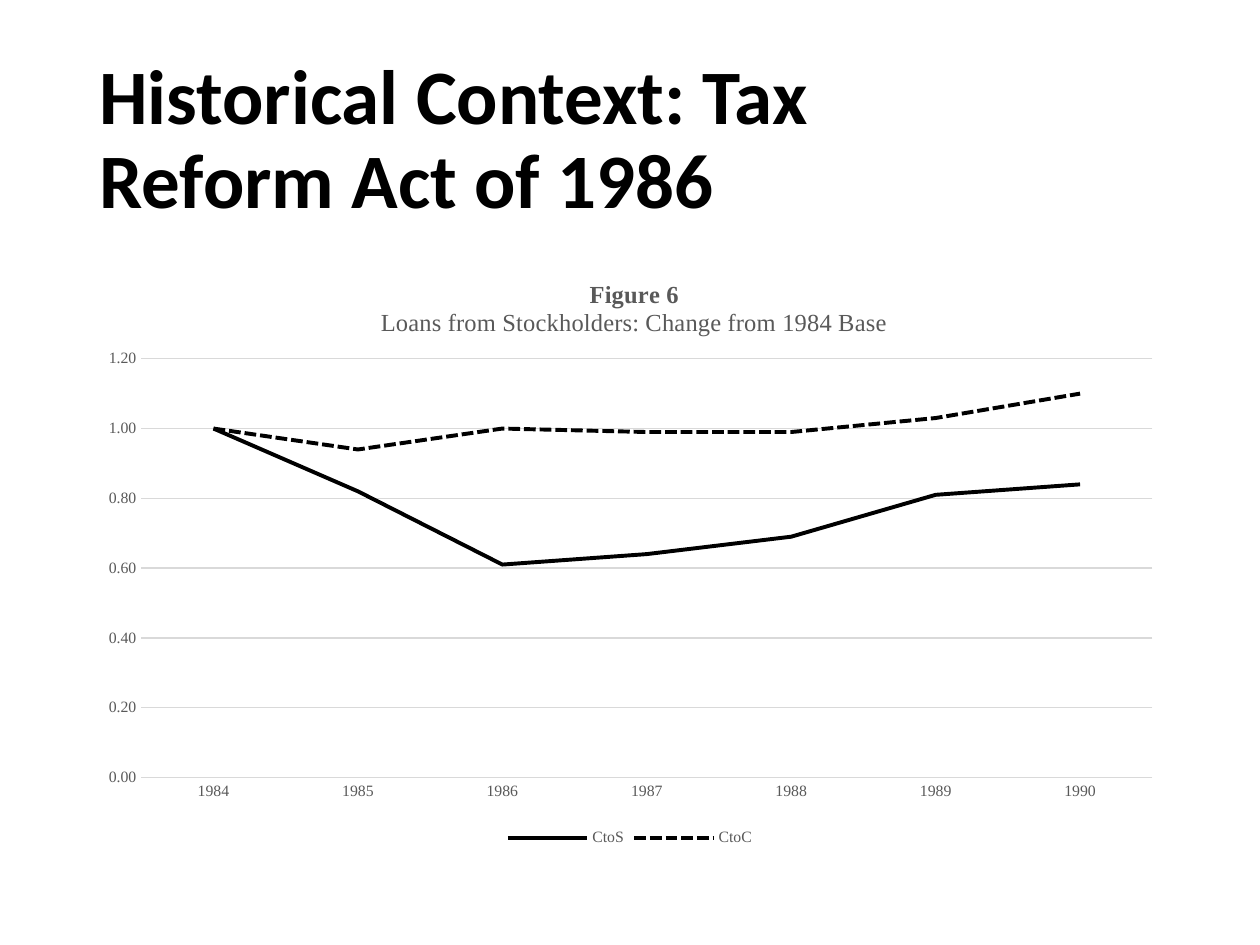
from pptx import Presentation
from pptx.chart.data import CategoryChartData
from pptx.dml.color import RGBColor
from pptx.enum.chart import XL_CHART_TYPE, XL_LEGEND_POSITION, XL_TICK_MARK
from pptx.enum.dml import MSO_LINE
from pptx.enum.text import MSO_ANCHOR
from pptx.oxml import parse_xml
from pptx.oxml.ns import nsdecls, qn
from pptx.util import Pt

PX = 914400 // 126
HUES = {"ink": "000000", "gray": "595959", "grid": "D9D9D9"}
SERIF = "Times New Roman"

HEAD = "Historical Context: Tax Reform Act of 1986"
TITLE = [("Figure 6", True), ("Loans from Stockholders: Change from 1984 Base", False)]
YEARS = ["1984", "1985", "1986", "1987", "1988", "1989", "1990"]
LOANS = [
    ("CtoS", [1, 0.82, 0.61, 0.64, 0.69, 0.81, 0.84], MSO_LINE.SOLID),
    ("CtoC", [1, 0.94, 1, 0.99, 0.99, 1.03, 1.1], MSO_LINE.SQUARE_DOT),
]
HEAD_BOX = (87, 50, 934, 183)
CHART_BOX = (87, 252, 1086, 600)
TITLE_AT = (377, 275)
PLOT_BOX = (141, 359, 1011, 419)


def color(name):
    return RGBColor.from_string(HUES[name])


def emu(box):
    return [n * PX for n in box]


def style(font, face=SERIF, size=9, hue="gray", bold=False):
    font.name, font.size, font.bold = face, Pt(size), bold
    font.color.rgb = color(hue)


def write(para, text, **form):
    run = para.add_run()
    run.text = text
    style(run.font, **form)


def stroke(line, hue, width):
    line.color.rgb = color(hue)
    line.width = Pt(width)


def place(node, index, box, inner=False):
    for old in node.findall(qn("c:layout")):
        node.remove(old)
    left, top, wide, high = CHART_BOX
    parts = [(box[0] - left) / wide, (box[1] - top) / high]
    parts += [n / full for n, full in zip(box[2:], (wide, high))]
    tags = '<c:layoutTarget val="inner"/>' if inner else ""
    tags += '<c:xMode val="edge"/><c:yMode val="edge"/>'
    tags += "".join(f'<c:{key} val="{n:.3f}"/>' for key, n in zip("xywh", parts))
    node.insert(index, parse_xml(
        f'<c:layout {nsdecls("c")}><c:manualLayout>{tags}</c:manualLayout></c:layout>'))


def add_head(slide):
    frame = slide.shapes.add_textbox(*emu(HEAD_BOX)).text_frame
    frame.word_wrap = True
    frame.vertical_anchor = MSO_ANCHOR.MIDDLE
    para = frame.paragraphs[0]
    para.line_spacing = 0.9
    write(para, HEAD, face="Calibri", size=44, hue="ink", bold=True)


def add_loans(slide):
    data = CategoryChartData(number_format="0.00")
    data.categories = YEARS
    for name, vals, _ in LOANS:
        data.add_series(name, vals)
    chart = slide.shapes.add_chart(XL_CHART_TYPE.LINE, *emu(CHART_BOX), data).chart
    style(chart.font, size=10, hue="ink")

    title = chart.chart_title
    frame = title.text_frame
    for i, (text, bold) in enumerate(TITLE):
        para = frame.add_paragraph() if i else frame.paragraphs[0]
        write(para, text, size=14, bold=bold)
    title.include_in_layout = False
    place(frame._txBody.getparent().getparent(), 1, TITLE_AT)

    plot = chart.plots[0]
    plot.vary_by_categories = False
    for line, (_, _, dash) in zip(plot.series, LOANS):
        line.smooth = False
        stroke(line.format.line, "ink", 2.25)
        line.format.line.dash_style = dash
    place(chart._chartSpace.chart.plotArea, 0, PLOT_BOX, inner=True)

    years, scale = chart.category_axis, chart.value_axis
    for axis in (years, scale):
        axis.major_tick_mark = axis.minor_tick_mark = XL_TICK_MARK.NONE
        style(axis.tick_labels.font)
    stroke(years.format.line, "grid", 0.75)
    scale.format.line.fill.background()
    stroke(scale.major_gridlines.format.line, "grid", 0.75)
    scale.minimum_scale, scale.maximum_scale, scale.major_unit = 0, 1.2, 0.2
    scale.tick_labels.number_format = "0.00"
    scale.tick_labels.number_format_is_linked = False

    chart.has_legend = True
    chart.legend.position = XL_LEGEND_POSITION.BOTTOM
    chart.legend.include_in_layout = False
    style(chart.legend.font)


def main():
    deck = Presentation()
    deck.slide_width, deck.slide_height = emu((1260, 945))
    slide = deck.slides.add_slide(deck.slide_layouts[6])
    add_head(slide)
    add_loans(slide)
    deck.save("out.pptx")


if __name__ == "__main__":
    main()
